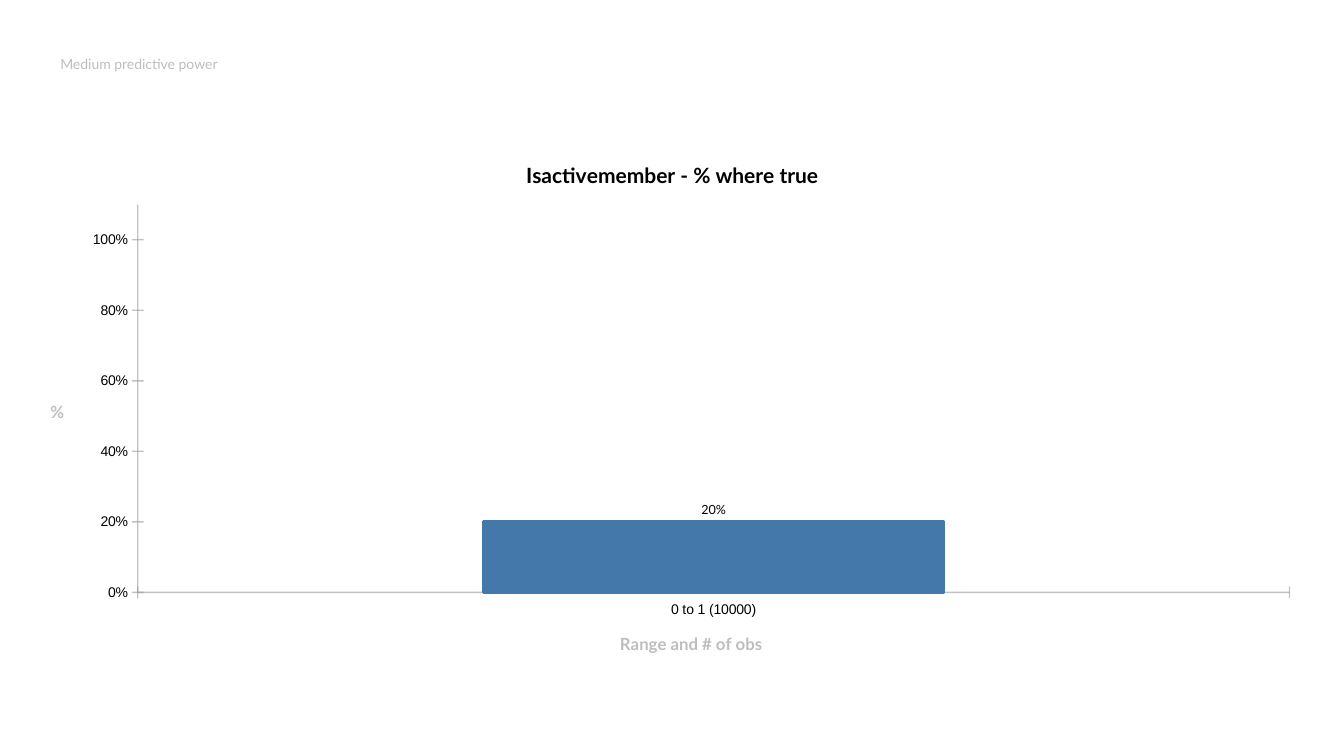
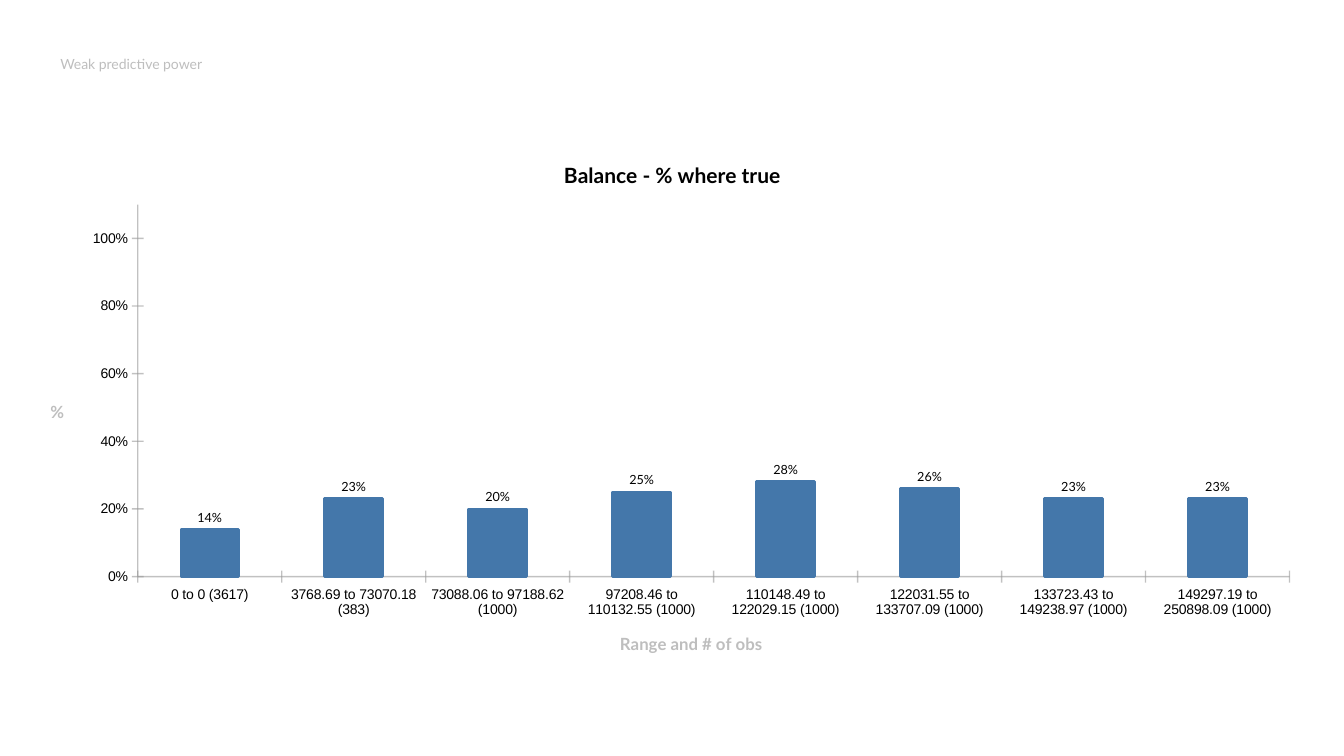
from lxml import etree
from pptx import Presentation
from pptx.chart.data import CategoryChartData
from pptx.dml.color import RGBColor
from pptx.enum import chart as kinds
from pptx.oxml import ns
from pptx.util import Pt

HUES = {"bar": "4477AA", "axis": "999999", "soft": "BEBEBE", "ink": "000000"}
HEAD, BODY = "Lato", "Arial"
NOTE_BOX = [Pt(n) for n in (36, 36, 432, 72)]
PLOT_BOX = [Pt(n) for n in (21, 100, 918.5, 382.5)]
X_NAME, Y_NAME = "Range and # of obs", "%"

PAGES = [
    {
        "note": "Medium predictive power",
        "title": "Isactivemember - % where true",
        "bars": [("0 to 1 (10000)", 0.2)],
    },
    {
        "note": "Weak predictive power",
        "title": "Balance - % where true",
        "bars": [
            ("0 to 0 (3617)", 0.14),
            ("3768.69 to 73070.18 (383)", 0.23),
            ("73088.06 to 97188.62 (1000)", 0.2),
            ("97208.46 to 110132.55 (1000)", 0.25),
            ("110148.49 to 122029.15 (1000)", 0.28),
            ("122031.55 to 133707.09 (1000)", 0.26),
            ("133723.43 to 149238.97 (1000)", 0.23),
            ("149297.19 to 250898.09 (1000)", 0.23),
        ],
    },
]


def tint(hue):
    return RGBColor.from_string(HUES[hue])


def style(font, size, hue="ink", face=HEAD, bold=False):
    font.size, font.name, font.bold = Pt(size), face, bold
    font.color.rgb = tint(hue)


def label(frame, words, size, hue="ink", bold=False):
    frame.text = words
    style(frame.paragraphs[0].font, size, hue, bold=bold)


def dress(axis, name):
    axis.has_major_gridlines = False
    axis.major_tick_mark = kinds.XL_TICK_MARK.CROSS
    axis.minor_tick_mark = kinds.XL_TICK_MARK.NONE
    style(axis.tick_labels.font, 10, face=BODY)
    line = axis.format.line
    line.width = Pt(1)
    line.color.rgb = tint("axis")
    for clr in axis.format.line.fill._xPr.iter(ns.qn("a:srgbClr")):
        etree.SubElement(clr, ns.qn("a:alpha"), val="60000")
    frame = axis.axis_title.text_frame
    label(frame, name, 12, "soft", True)
    frame._txBody.bodyPr.set("rot", "0")


def add_note(slide, words):
    frame = slide.shapes.add_textbox(*NOTE_BOX).text_frame
    frame.word_wrap = True
    label(frame, words, 10, "soft")


def add_plot(slide, title, bars):
    data = CategoryChartData(number_format="0%")
    data.categories = [name for name, share in bars]
    data.add_series("Series 1", [share for name, share in bars])
    kind = kinds.XL_CHART_TYPE.COLUMN_CLUSTERED
    chart = slide.shapes.add_chart(kind, *PLOT_BOX, data).chart
    style(chart.font, 18)
    chart.has_legend = False
    label(chart.chart_title.text_frame, title, 15, bold=True)
    chart.chart_title.include_in_layout = False

    dress(chart.category_axis, X_NAME)
    axis = chart.value_axis
    dress(axis, Y_NAME)
    axis.minimum_scale, axis.maximum_scale = 0, 1.1
    axis.major_unit = 0.2
    axis.tick_labels.number_format = "0%"
    axis.tick_labels.number_format_is_linked = False

    plot = chart.plots[0]
    plot.gap_width = 150
    plot.vary_by_categories = False
    look = plot.series[0].format
    look.fill.solid()
    look.fill.fore_color.rgb = tint("bar")
    look.line.width = Pt(2)
    look.line.color.rgb = tint("bar")

    plot.has_data_labels = True
    tags = plot.data_labels
    tags.show_value = True
    tags.number_format = "0%"
    tags.number_format_is_linked = False
    tags.position = kinds.XL_LABEL_POSITION.OUTSIDE_END
    style(tags.font, 9)


def main():
    deck = Presentation()
    deck.slide_width, deck.slide_height = Pt(960), Pt(540)
    for page in PAGES:
        slide = deck.slides.add_slide(deck.slide_layouts[6])
        add_plot(slide, page["title"], page["bars"])
        add_note(slide, page["note"])
    deck.save("out.pptx")


if __name__ == "__main__":
    main()
